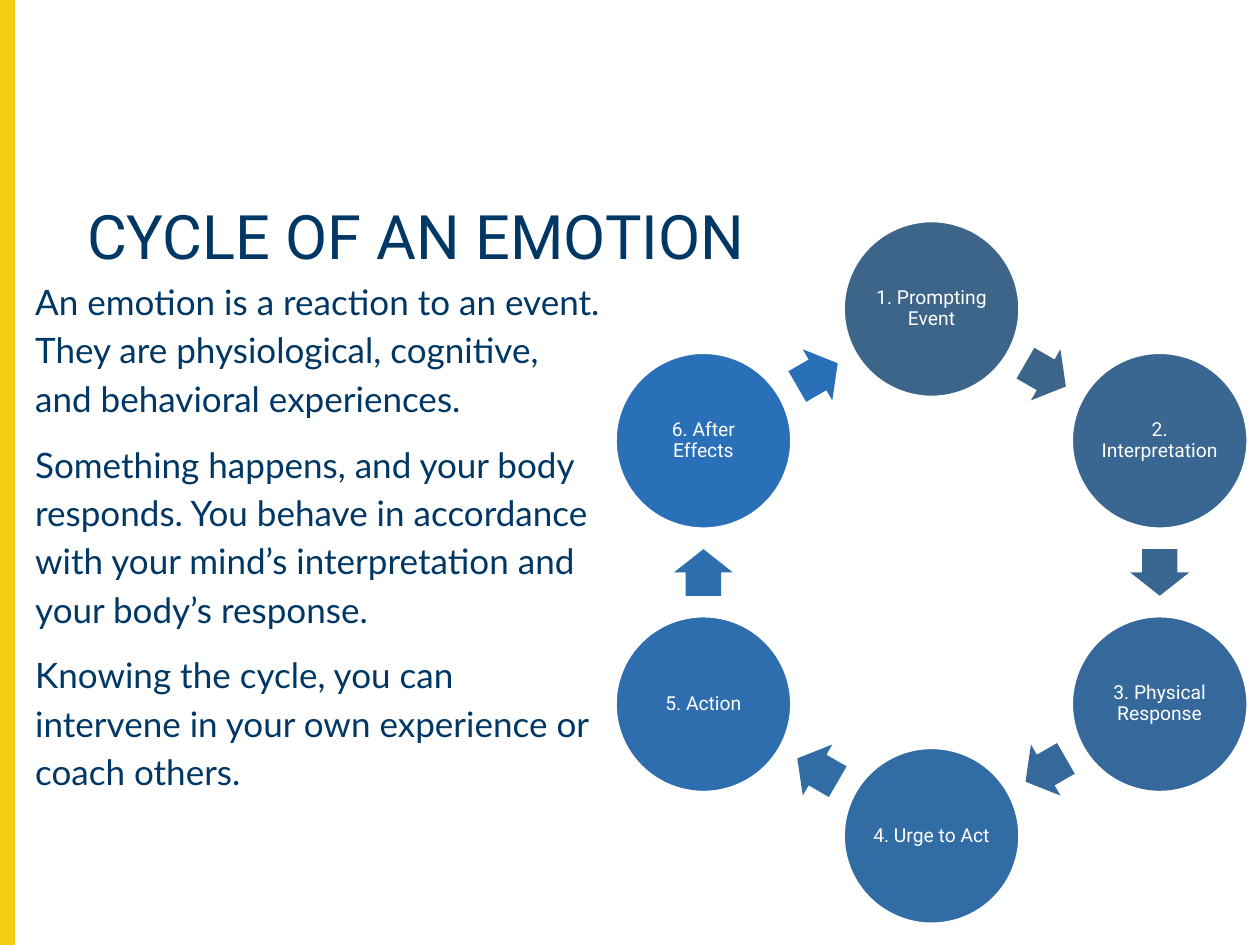
from dataclasses import dataclass
from math import cos, radians, sin

from pptx import Presentation
from pptx.dml.color import RGBColor
from pptx.enum.shapes import MSO_SHAPE as Preset
from pptx.enum.text import MSO_ANCHOR as Anchor, MSO_AUTO_SIZE as AutoSize, PP_ALIGN as Align
from pptx.shapes.autoshape import Shape
from pptx.slide import Slide
from pptx.text.text import _Paragraph as Paragraph
from pptx.util import Cm, Pt

NAVY = RGBColor(0x00, 0x37, 0x64)
YELLOW = RGBColor(0xF4, 0xCE, 0x12)
WHITE = RGBColor(0xFF, 0xFF, 0xFF)

# Ring geometry, in centimetres
CENTER_X, CENTER_Y = 18.78, 11.54
RADIUS = 5.31
CIRCLE = 3.53
ARROW_LENGTH, ARROW_HEIGHT = 0.94, 1.19


@dataclass
class Stage:
    label: str
    color: RGBColor


STAGES = [
    Stage("1. Prompting Event", RGBColor(0x3D, 0x64, 0x89)),
    Stage("2. Interpretation", RGBColor(0x3A, 0x67, 0x92)),
    Stage("3. Physical Response", RGBColor(0x36, 0x69, 0x9B)),
    Stage("4. Urge to Act", RGBColor(0x32, 0x6C, 0xA4)),
    Stage("5. Action", RGBColor(0x2E, 0x6E, 0xAE)),
    Stage("6. After Effects", RGBColor(0x2A, 0x70, 0xB8)),
]

BODY = [
    "An emotion is a reaction to an event. They are physiological, cognitive, "
    "and behavioral experiences.",
    "Something happens, and your body responds. You behave in accordance with "
    "your mind’s interpretation and your body’s response.",
    "Knowing the cycle, you can intervene in your own experience or coach others.",
]


def add_span(para: Paragraph, text: str, font: str, size: float, color: RGBColor) -> None:
    span = para.add_run()
    span.text = text
    span.font.name = font
    span.font.size = Pt(size)
    span.font.color.rgb = color


def add_polar_shape(page: Slide, preset: Preset, distance: float, angle: float,
                    width: float, height: float, color: RGBColor) -> Shape:
    """Centre a filled shape at a polar position around the ring's centre."""
    x = CENTER_X + distance * cos(radians(angle))
    y = CENTER_Y + distance * sin(radians(angle))
    shape = page.shapes.add_shape(preset, Cm(x - width / 2), Cm(y - height / 2),
                                  Cm(width), Cm(height))
    shape.shadow.inherit = False
    shape.fill.solid()
    shape.fill.fore_color.rgb = color
    return shape


def add_circle(page: Slide, stage: Stage, angle: float) -> None:
    circle = add_polar_shape(page, Preset.OVAL, RADIUS, angle, CIRCLE, CIRCLE, stage.color)
    circle.line.color.rgb = WHITE
    circle.line.width = Pt(1)
    frame = circle.text_frame
    frame.word_wrap = True
    frame.vertical_anchor = Anchor.MIDDLE
    frame.margin_left = frame.margin_right = Cm(0.05)
    frame.margin_top = frame.margin_bottom = Cm(0.05)
    para = frame.paragraphs[0]
    para.alignment = Align.CENTER
    para.line_spacing = 0.9
    add_span(para, stage.label, "Roboto", 11, WHITE)


def add_arrow(page: Slide, color: RGBColor, angle: float) -> None:
    arrow = add_polar_shape(page, Preset.RIGHT_ARROW, RADIUS * cos(radians(30)), angle,
                            ARROW_LENGTH, ARROW_HEIGHT, color)
    arrow.adjustments[0] = 0.6
    arrow.adjustments[1] = 0.5
    arrow.rotation = (angle + 90) % 360
    arrow.line.fill.background()


def add_title(page: Slide) -> None:
    title = page.shapes.title
    title.left, title.top, title.width, title.height = Cm(1.5), Cm(4.04), Cm(23.06), Cm(2.18)
    frame = title.text_frame
    frame.word_wrap = True
    frame.auto_size = AutoSize.NONE
    frame.vertical_anchor = Anchor.TOP
    para = frame.paragraphs[0]
    para.alignment = Align.LEFT
    para.line_spacing = 0.9
    add_span(para, "CYCLE OF AN EMOTION", "Roboto", 35, NAVY)


def add_body(page: Slide) -> None:
    box = page.shapes.add_textbox(Cm(0.46), Cm(5.28), Cm(11.94), Cm(9.78))
    frame = box.text_frame
    frame.word_wrap = True
    frame.margin_left = frame.margin_right = Cm(0.25)
    frame.margin_top = frame.margin_bottom = Cm(0.25)
    for index, text in enumerate(BODY):
        para = frame.add_paragraph() if index else frame.paragraphs[0]
        para.line_spacing = 1.15
        para.space_before = Pt(10 if index else 0)
        add_span(para, text, "Lato", 20, NAVY)


def main() -> None:
    deck = Presentation()
    deck.slide_width, deck.slide_height = Cm(25.4), Cm(19.05)
    page = deck.slides.add_slide(deck.slide_layouts[5])

    # Yellow edge bar
    bar = page.shapes.add_shape(Preset.RECTANGLE, 0, 0, Cm(0.28), deck.slide_height)
    bar.shadow.inherit = False
    bar.fill.solid()
    bar.fill.fore_color.rgb = YELLOW
    bar.line.color.rgb = YELLOW
    bar.line.width = Pt(1)

    # Title and explanation
    add_title(page)
    add_body(page)

    # Cycle, clockwise from the top
    step = 360 / len(STAGES)
    for index, stage in enumerate(STAGES):
        angle = -90 + index * step
        add_circle(page, stage, angle)
        add_arrow(page, stage.color, angle + step / 2)

    deck.save("out.pptx")


if __name__ == "__main__":
    main()
